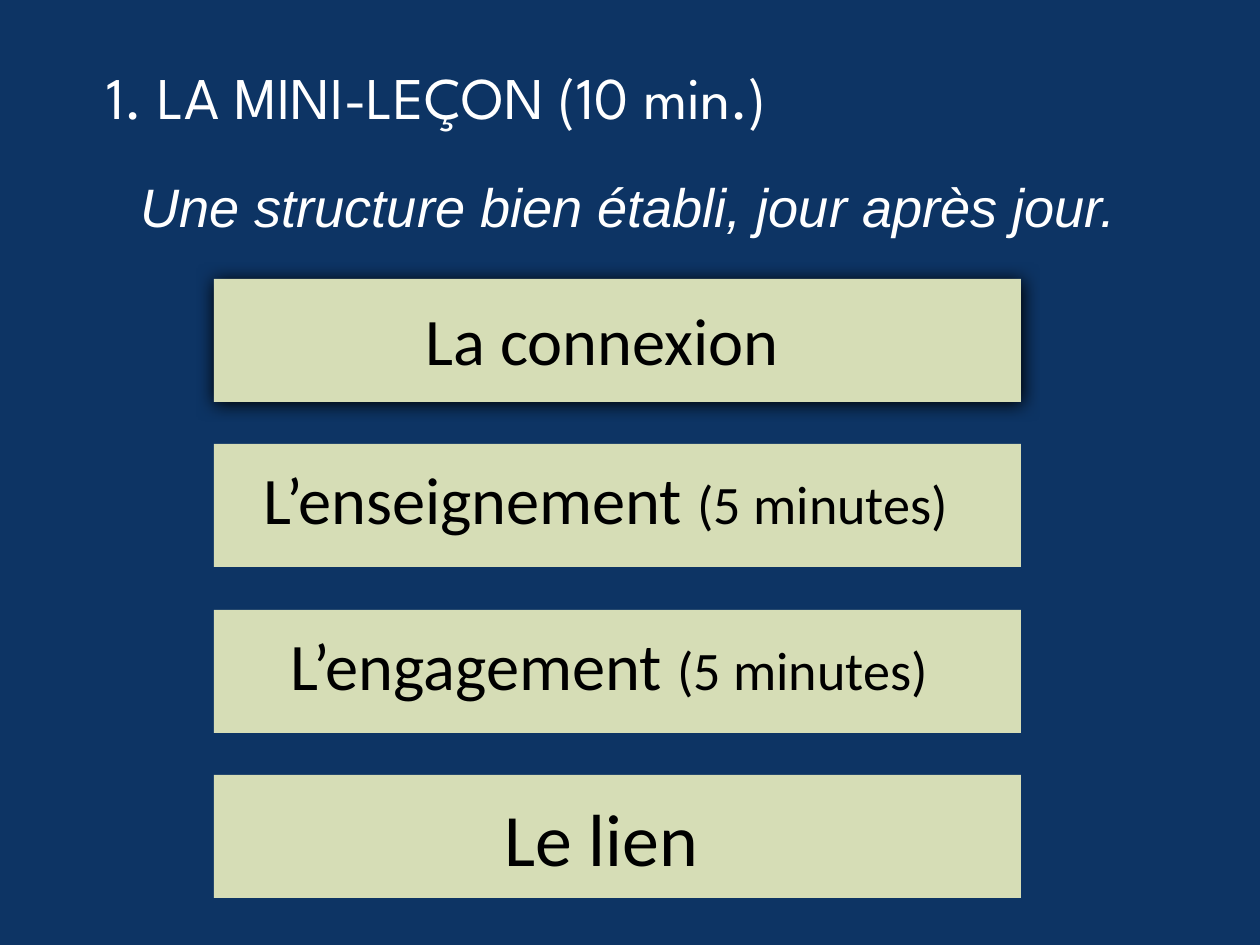
from lxml.etree import SubElement
from pptx import Presentation
from pptx.dml.color import RGBColor
from pptx.enum.shapes import MSO_SHAPE
from pptx.enum.text import MSO_ANCHOR, PP_ALIGN
from pptx.oxml.ns import qn
from pptx.util import Pt

PX = 10320
COLOURS = {"navy": "0D3464", "sage": "D6DDB6", "white": "FFFFFF", "black": "000000"}


class LessonSlide:
    def __init__(self, deck):
        self.slide = deck.slides.add_slide(deck.slide_layouts[6])
        backdrop = self.slide.background.fill
        backdrop.solid()
        backdrop.fore_color.rgb = self.colour("navy")

    def colour(self, name):
        return RGBColor.from_string(COLOURS[name])

    def lengths(self, *px):
        return [value * PX for value in px]

    def band(self, left, top, width, height, shadow=False):
        band = self.slide.shapes.add_shape(
            MSO_SHAPE.RECTANGLE, *self.lengths(left, top, width, height))
        band.fill.solid()
        band.fill.fore_color.rgb = self.colour("sage")
        band.line.fill.background()
        band.shadow.inherit = False
        if shadow:
            effects = band._element.spPr.find(qn("a:effectLst"))
            outer = SubElement(effects, qn("a:outerShdw"), blurRad=str(Pt(15)),
                               dist=str(Pt(0.7)), dir="5400000", rotWithShape="0")
            SubElement(outer, qn("a:srgbClr"), val=COLOURS["black"])

    def text(self, box, pieces, font="Calibri", colour="black",
             align=PP_ALIGN.CENTER, italic=False, wrap=True):
        frame = self.slide.shapes.add_textbox(*self.lengths(*box)).text_frame
        frame.word_wrap = wrap
        frame.vertical_anchor = MSO_ANCHOR.MIDDLE
        frame.margin_left = frame.margin_right = 5 * PX
        frame.margin_top = frame.margin_bottom = 5 * PX
        paragraph = frame.paragraphs[0]
        paragraph.alignment = align
        for words, size in pieces:
            run = paragraph.add_run()
            run.text = words
            run.font.name = font
            run.font.size = Pt(size)
            run.font.italic = italic
            run.font.color.rgb = self.colour(colour)


def main():
    deck = Presentation()
    deck.slide_width = 1260 * PX
    deck.slide_height = 945 * PX
    lesson = LessonSlide(deck)

    lesson.text((102, 25, 1064, 142), [("1. LA MINI-LEÇON (10 min.)", 48)],
                font="League Spartan", colour="white", align=PP_ALIGN.LEFT)
    lesson.text((38, 169, 1182, 74),
                [("Une structure bien établi, jour après jour.", 44)],
                font="Arial", colour="white", italic=True)

    duration = ("(5 minutes) ", 44)
    steps = [
        ((413, 294, 378, 89), [("La connexion ", 54)], False),
        ((248, 453, 728, 89), [("L’enseignement ", 54), duration], True),
        ((234, 619, 763, 89), [("L’engagement ", 54), duration], True),
        ((481, 785, 241, 103), [(" Le lien ", 60)], False),
    ]
    for index, (box, pieces, wrap) in enumerate(steps):
        lesson.band(214, 279 + index * 331 // 2, 807, 123, shadow=index == 0)
        lesson.text(box, pieces, wrap=wrap)

    deck.save("out.pptx")


if __name__ == "__main__":
    main()
